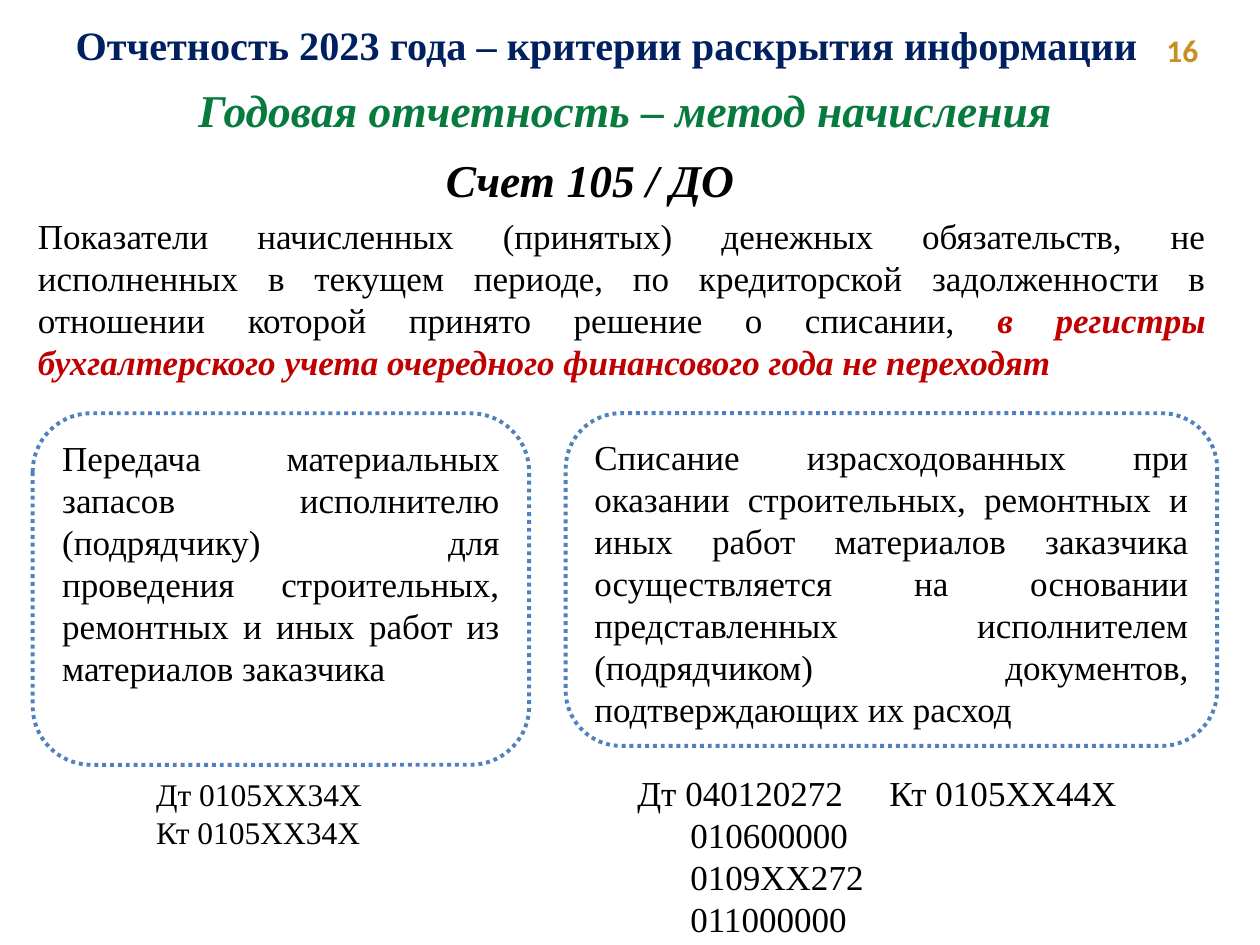
from dataclasses import dataclass
from typing import Any, Optional

import pptx
import pptx.dml.color
import pptx.enum.dml
import pptx.enum.shapes
import pptx.enum.text
import pptx.oxml.ns
import pptx.util
from lxml import etree

Inches = pptx.util.Inches
Align = pptx.enum.text.PP_ALIGN

COLORS = {
    "black": "000000",
    "navy": "002060",
    "green": "077A3E",
    "red": "C00000",
    "gold": "C79023",
    "blue": "4F81BD",
}


@dataclass(frozen=True)
class Area:
    left: float
    top: float
    width: float
    height: float

    def lengths(self) -> tuple:
        return tuple(Inches(value) for value in (self.left, self.top, self.width, self.height))


@dataclass(frozen=True)
class Operation:
    area: Area
    text: str


@dataclass(frozen=True)
class Label:
    area: Area
    text: str
    style: dict


def rgb(name: str) -> pptx.dml.color.RGBColor:
    return pptx.dml.color.RGBColor.from_string(COLORS[name])


def add_span(para: Any, text: str, *, size: float = 20, color: str = "black",
             bold: bool = False, italic: bool = False,
             font: str = "Times New Roman") -> None:
    span = para.add_run()
    span.text = text
    span.font.name = font
    span.font.size = pptx.util.Pt(size)
    span.font.bold = bold
    span.font.italic = italic
    span.font.color.rgb = rgb(color)


def format_para(para: Any, align: Any = Align.LEFT, after: float = 0,
                indent: float = 0, tab: Optional[float] = None) -> None:
    para.alignment = align
    para.space_before = pptx.util.Pt(0)
    para.space_after = pptx.util.Pt(after)
    properties = para._p.get_or_add_pPr()
    properties.set("marL", str(Inches(indent)))
    properties.set("indent", "0")
    etree.SubElement(properties, pptx.oxml.ns.qn("a:buNone"))
    if tab is not None:
        tabs = etree.SubElement(properties, pptx.oxml.ns.qn("a:tabLst"))
        etree.SubElement(tabs, pptx.oxml.ns.qn("a:tab"), pos=str(Inches(tab)), algn="l")


def prepare_frame(box: Any) -> Any:
    frame = box.text_frame
    frame.word_wrap = True
    frame.auto_size = pptx.enum.text.MSO_AUTO_SIZE.NONE
    frame.vertical_anchor = pptx.enum.text.MSO_ANCHOR.TOP
    return frame


def place(box: Any, area: Area) -> Any:
    box.left, box.top, box.width, box.height = area.lengths()
    return prepare_frame(box)


def add_label(page: Any, label: Label, align: Any = Align.CENTER, after: float = 0) -> None:
    frame = prepare_frame(page.shapes.add_textbox(*label.area.lengths()))
    para = frame.paragraphs[0]
    format_para(para, align, after)
    add_span(para, label.text, **label.style)


def add_operation(page: Any, operation: Operation) -> None:
    box = page.shapes.add_shape(
        pptx.enum.shapes.MSO_SHAPE.ROUNDED_RECTANGLE, *operation.area.lengths())
    box.shadow.inherit = False
    box.fill.background()
    box.line.color.rgb = rgb("blue")
    box.line.width = pptx.util.Pt(2.25)
    box.line.dash_style = pptx.enum.dml.MSO_LINE.ROUND_DOT
    para = prepare_frame(box).paragraphs[0]
    format_para(para, Align.JUSTIFY)
    add_span(para, operation.text)


def add_entries(page: Any, area: Area, lines: list[str], size: float,
                indent: float = 0, tab: Optional[float] = None) -> None:
    frame = prepare_frame(page.shapes.add_textbox(*area.lengths()))
    for number, line in enumerate(lines):
        para = frame.add_paragraph() if number else frame.paragraphs[0]
        format_para(para, indent=indent if number else 0, tab=tab)
        add_span(para, line, size=size)


HEADINGS = [
    Label(Area(0.2, 0.6, 9.53, 0.54), "Годовая отчетность – метод начисления",
          {"size": 26, "color": "green", "bold": True, "italic": True}),
    Label(Area(0.67, 1.16, 8.03, 0.54), "Счет 105 / ДО",
          {"size": 26, "bold": True, "italic": True}),
]

PAGE_NUMBER = Label(Area(9.16, 0.2, 0.66, 0.4), "16",
                    {"size": 18, "color": "gold", "bold": True, "font": "Calibri"})

OPERATIONS = [
    Operation(Area(0.26, 3.28, 3.94, 2.79),
              "Передача материальных запасов исполнителю (подрядчику) для проведения "
              "строительных, ремонтных и иных работ из материалов заказчика"),
    Operation(Area(4.49, 3.28, 5.17, 2.64),
              "Списание израсходованных при оказании строительных, ремонтных и иных работ "
              "материалов заказчика осуществляется на основании представленных исполнителем "
              "(подрядчиком) документов, подтверждающих их расход"),
]


def main() -> None:
    deck = pptx.Presentation()
    deck.slide_width, deck.slide_height = Inches(10), Inches(7.5)
    page = deck.slides.add_slide(deck.slide_layouts[1])

    title = place(page.shapes.title, Area(0.47, 0.11, 8.7, 0.49)).paragraphs[0]
    format_para(title, Align.CENTER)
    add_span(title, "Отчетность 2023 года – критерии раскрытия информации",
             size=23, color="navy", bold=True)

    body = place(page.placeholders[1], Area(0.2, 1.65, 9.47, 1.45)).paragraphs[0]
    format_para(body, Align.JUSTIFY)
    add_span(body, "Показатели начисленных (принятых) денежных обязательств, не исполненных "
                   "в текущем периоде, по кредиторской задолженности в отношении которой "
                   "принято решение о списании, ")
    add_span(body, "в регистры бухгалтерского учета очередного финансового года не переходят",
             color="red", bold=True, italic=True)

    for heading in HEADINGS:
        add_label(page, heading, after=6)
    add_label(page, PAGE_NUMBER, Align.LEFT)
    for operation in OPERATIONS:
        add_operation(page, operation)

    add_entries(page, Area(1.14, 6.1, 1.98, 0.71), ["Дт 0105ХХ34Х", "Кт 0105ХХ34Х"], 18)
    add_entries(page, Area(4.96, 6.07, 4.58, 1.45),
                ["Дт 040120272\tКт 0105ХХ44Х", "010600000", "0109ХХ272", "011000000"],
                20, indent=0.42, tab=2.19)

    deck.save("out.pptx")


if __name__ == "__main__":
    main()
